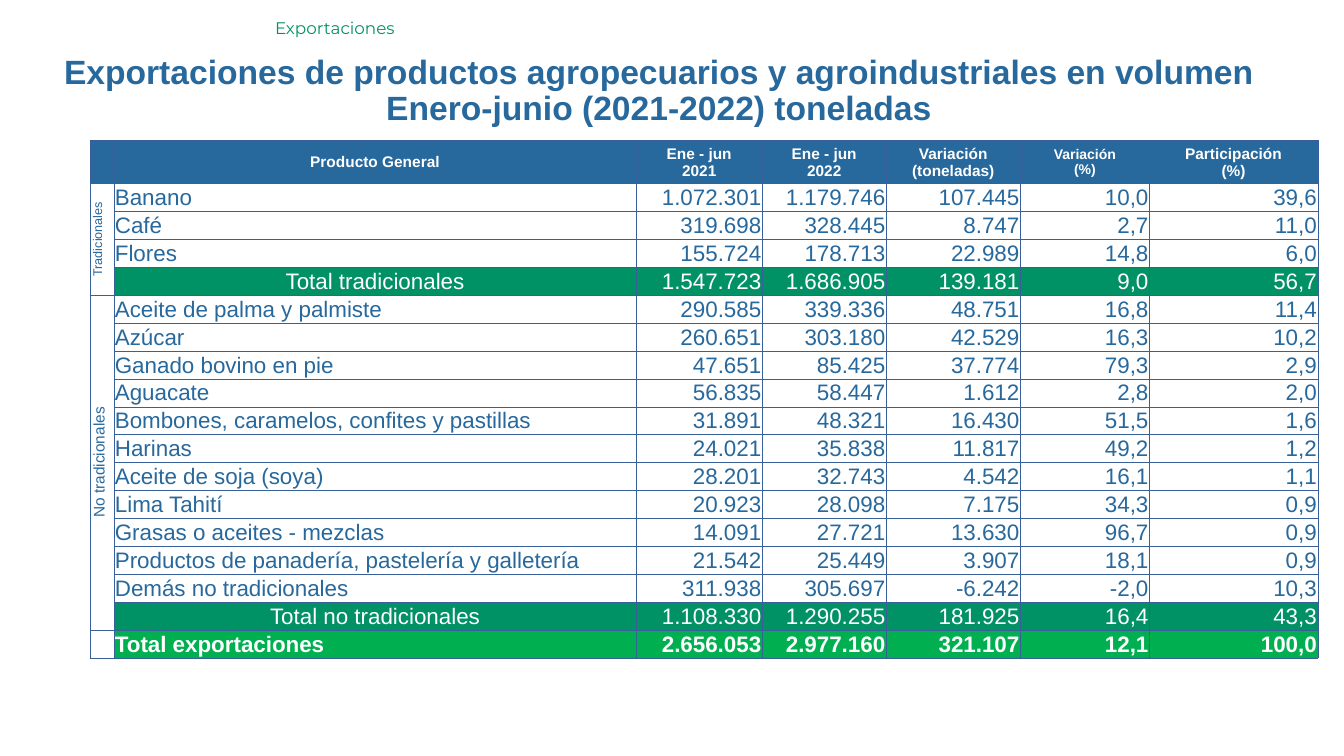
from dataclasses import dataclass
from typing import Optional

from lxml import etree
from pptx import Presentation
from pptx.dml.color import RGBColor
from pptx.enum.text import MSO_ANCHOR, MSO_AUTO_SIZE, PP_ALIGN
from pptx.oxml.ns import qn
from pptx.util import Inches, Pt

LEFT, CENTER, RIGHT = PP_ALIGN.LEFT, PP_ALIGN.CENTER, PP_ALIGN.RIGHT
MIDDLE = MSO_ANCHOR.MIDDLE
GROW = MSO_AUTO_SIZE.SHAPE_TO_FIT_TEXT

BLUE = RGBColor(0x27, 0x68, 0x9D)
BORDER = RGBColor(0x39, 0x5F, 0x9B)
SECTION_GREEN = RGBColor(0x00, 0x92, 0x67)
SUBTOTAL_GREEN = RGBColor(0x00, 0x91, 0x65)
TOTAL_GREEN = RGBColor(0x00, 0xB0, 0x50)
WHITE = RGBColor(0xFF, 0xFF, 0xFF)

COLUMN_WIDTHS = (0.24, 5.18, 1.25, 1.23, 1.33, 1.28, 1.67)
TABLE_HEIGHT = 5.08
HEADER_HEIGHT = 0.43


@dataclass(frozen=True)
class TextStyle:
    size: float
    color: RGBColor
    bold: bool = False
    font: str = "Arial"


@dataclass(frozen=True)
class RowStyle:
    text: TextStyle
    fill: Optional[RGBColor] = None
    label_align: PP_ALIGN = LEFT


@dataclass(frozen=True)
class ProductRow:
    label: str
    values: str
    style: RowStyle


@dataclass(frozen=True)
class ProductGroup:
    label: str
    first_row: int
    last_row: int
    size: float


@dataclass(frozen=True)
class HeaderCell:
    text: str
    size: float = 11


PRODUCT = RowStyle(TextStyle(16, BLUE))
SUBTOTAL = RowStyle(TextStyle(16, WHITE), SUBTOTAL_GREEN, CENTER)
TOTAL = RowStyle(TextStyle(16, WHITE, bold=True), TOTAL_GREEN)

HEADERS = (
    HeaderCell(""),
    HeaderCell("Producto General"),
    HeaderCell("Ene - jun\n2021"),
    HeaderCell("Ene - jun\n2022"),
    HeaderCell("Variación\n(toneladas)"),
    HeaderCell("Variación\n(%)", 10),
    HeaderCell("Participación\n(%)"),
)

ROWS = (
    ProductRow("Banano", "1.072.301 1.179.746 107.445 10,0 39,6", PRODUCT),
    ProductRow("Café", "319.698 328.445 8.747 2,7 11,0", PRODUCT),
    ProductRow("Flores", "155.724 178.713 22.989 14,8 6,0", PRODUCT),
    ProductRow("Total tradicionales", "1.547.723 1.686.905 139.181 9,0 56,7", SUBTOTAL),
    ProductRow("Aceite de palma y palmiste", "290.585 339.336 48.751 16,8 11,4", PRODUCT),
    ProductRow("Azúcar", "260.651 303.180 42.529 16,3 10,2", PRODUCT),
    ProductRow("Ganado bovino en pie", "47.651 85.425 37.774 79,3 2,9", PRODUCT),
    ProductRow("Aguacate", "56.835 58.447 1.612 2,8 2,0", PRODUCT),
    ProductRow("Bombones, caramelos, confites y pastillas", "31.891 48.321 16.430 51,5 1,6", PRODUCT),
    ProductRow("Harinas", "24.021 35.838 11.817 49,2 1,2", PRODUCT),
    ProductRow("Aceite de soja (soya)", "28.201 32.743 4.542 16,1 1,1", PRODUCT),
    ProductRow("Lima Tahití", "20.923 28.098 7.175 34,3 0,9", PRODUCT),
    ProductRow("Grasas o aceites - mezclas", "14.091 27.721 13.630 96,7 0,9", PRODUCT),
    ProductRow("Productos de panadería, pastelería y galletería", "21.542 25.449 3.907 18,1 0,9", PRODUCT),
    ProductRow("Demás no tradicionales", "311.938 305.697 -6.242 -2,0 10,3", PRODUCT),
    ProductRow("Total no tradicionales", "1.108.330 1.290.255 181.925 16,4 43,3", SUBTOTAL),
    ProductRow("Total exportaciones", "2.656.053 2.977.160 321.107 12,1 100,0", TOTAL),
)

GROUPS = (
    ProductGroup("Tradicionales", 1, 4, 9),
    ProductGroup("No tradicionales", 5, 16, 11),
)


def write_text(frame, text: str, style: TextStyle, align: PP_ALIGN) -> None:
    frame.text = text
    for para in frame.paragraphs:
        para.alignment = align
        for span in para.runs:
            span.font.name = style.font
            span.font.size = Pt(style.size)
            span.font.bold = style.bold
            span.font.color.rgb = style.color
        if not para.runs:
            etree.SubElement(para._p, qn("a:endParaRPr"), sz=str(int(style.size * 100)))


def add_text_box(page, left: float, top: float, width: float, height: float,
                 text: str, style: TextStyle, align: PP_ALIGN):
    box = page.shapes.add_textbox(Inches(left), Inches(top), Inches(width), Inches(height))
    box.text_frame.word_wrap = True
    write_text(box.text_frame, text, style, align)
    return box.text_frame


def add_borders(cell) -> None:
    properties = cell._tc.get_or_add_tcPr()
    for side in ("lnL", "lnR", "lnT", "lnB"):
        line = etree.SubElement(properties, qn(f"a:{side}"), w=str(Pt(0.25)))
        solid = etree.SubElement(line, qn("a:solidFill"))
        etree.SubElement(solid, qn("a:srgbClr"), val=str(BORDER))


def fill_cell(cell, text: str, style: TextStyle, align: PP_ALIGN,
              fill: Optional[RGBColor] = None) -> None:
    write_text(cell.text_frame, text, style, align)
    cell.vertical_anchor = MIDDLE
    cell.margin_left = cell.margin_top = cell.margin_right = Inches(0.01)
    cell.margin_bottom = 0
    add_borders(cell)
    if fill is None:
        cell.fill.background()
    else:
        cell.fill.solid()
        cell.fill.fore_color.rgb = fill


def add_export_table(page) -> None:
    frame = page.shapes.add_table(
        len(ROWS) + 1, len(COLUMN_WIDTHS), Inches(0.89), Inches(1.39),
        Inches(sum(COLUMN_WIDTHS)), Inches(TABLE_HEIGHT))
    table = frame.table
    table.first_row = False
    table.horz_banding = False
    for column, width in zip(table.columns, COLUMN_WIDTHS):
        column.width = Inches(width)
    for row in table.rows:
        row.height = Inches((TABLE_HEIGHT - HEADER_HEIGHT) / len(ROWS))
    table.rows[0].height = Inches(HEADER_HEIGHT)

    for column, header in enumerate(HEADERS):
        style = TextStyle(header.size, WHITE, bold=True)
        fill_cell(table.cell(0, column), header.text, style, CENTER, BLUE)

    group_labels = {group.first_row: group for group in GROUPS}
    for index, product in enumerate(ROWS, start=1):
        group = group_labels.get(index)
        label, size = (group.label, group.size) if group else ("", 9)
        fill_cell(table.cell(index, 0), label, TextStyle(size, BLUE), CENTER)
        look = product.style
        fill_cell(table.cell(index, 1), product.label, look.text, look.label_align, look.fill)
        for column, value in enumerate(product.values.split(), start=2):
            fill_cell(table.cell(index, column), value, look.text, RIGHT, look.fill)

    for group in GROUPS:
        top_cell = table.cell(group.first_row, 0)
        top_cell.merge(table.cell(group.last_row, 0))
        top_cell._tc.get_or_add_tcPr().set("vert", "vert270")


def main() -> None:
    deck = Presentation()
    deck.slide_width, deck.slide_height = Inches(13.33), Inches(7.5)
    page = deck.slides.add_slide(deck.slide_layouts[6])
    section = add_text_box(page, 2.63, 0.13, 10.7, 0.3, "Exportaciones",
                           TextStyle(12, SECTION_GREEN, font="Montserrat"), LEFT)
    section.auto_size = GROW
    title = add_text_box(
        page, 0.08, 0.53, 12.91, 0.76,
        "Exportaciones de productos agropecuarios y agroindustriales en volumen "
        "Enero-junio (2021-2022) toneladas",
        TextStyle(24, BLUE, bold=True), CENTER)
    title.vertical_anchor = MIDDLE
    title.paragraphs[0].line_spacing = 0.9
    add_export_table(page)
    deck.save("out.pptx")


if __name__ == "__main__":
    main()
